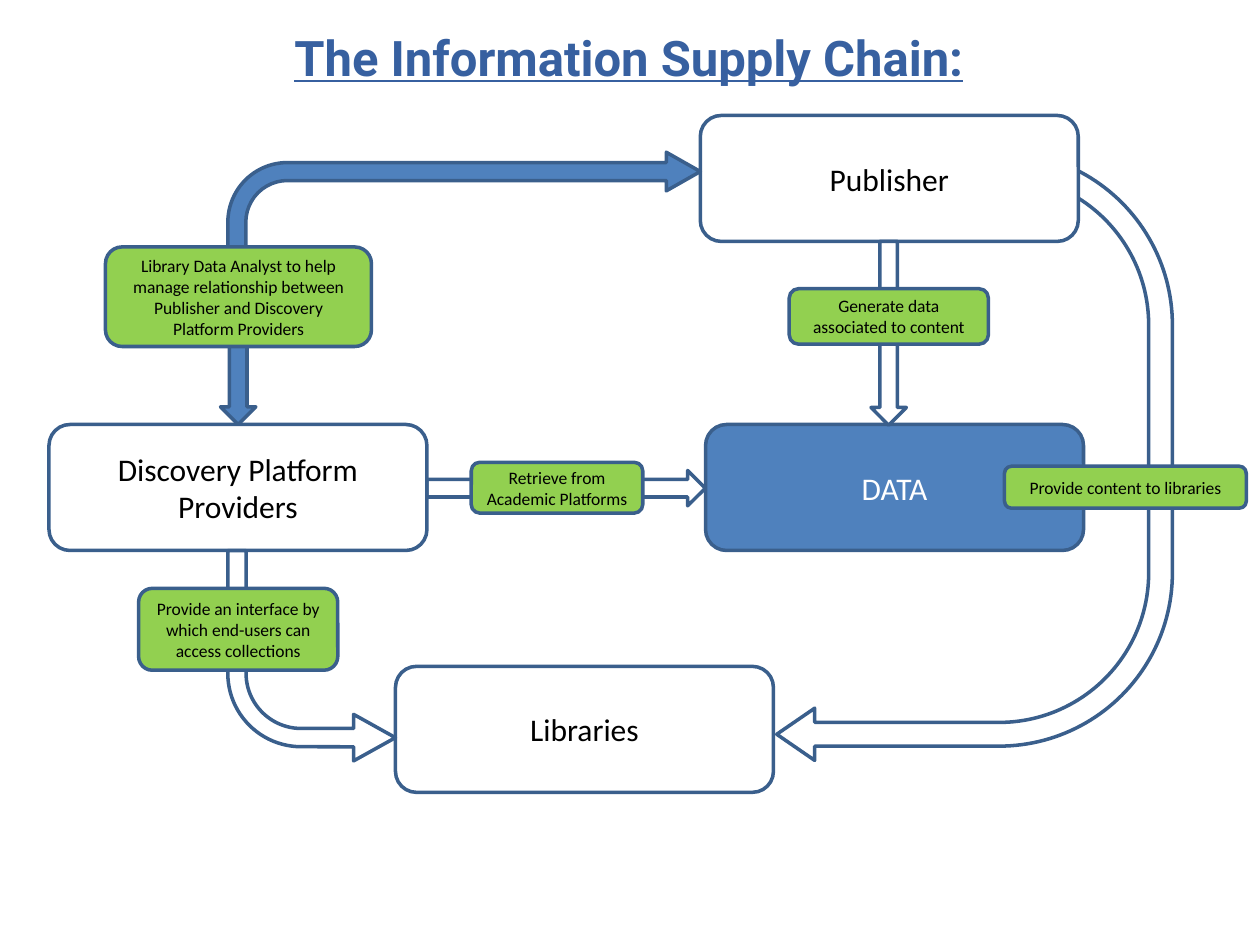
from pptx import Presentation
from pptx.dml.color import RGBColor
from pptx.enum.shapes import MSO_SHAPE
from pptx.enum.text import MSO_ANCHOR, PP_ALIGN
from pptx.util import Pt

COLORS = {
    "white": "FFFFFF",
    "black": "000000",
    "blue": "4F81BD",
    "outline": "3A5F8C",
    "green": "92D050",
    "title": "3760A0",
}
BOX_SIZE = (216, 72)
ARROW_WIDTH = 20.2


class SupplyChainSlide:
    def __init__(self, slide):
        self.slide = slide

    def color(self, name):
        return RGBColor.from_string(COLORS[name])

    def set_text(self, shape, text, size, color, font="Calibri"):
        frame = shape.text_frame
        frame.word_wrap = True
        frame.text = text
        paragraph = frame.paragraphs[0]
        paragraph.alignment = PP_ALIGN.CENTER
        run_font = paragraph.runs[0].font
        run_font.name = font
        run_font.size = Pt(size)
        run_font.color.rgb = self.color(color)
        return paragraph

    def shape(self, kind, left, top, width, height, fill):
        shape = self.slide.shapes.add_shape(kind, Pt(left), Pt(top), Pt(width), Pt(height))
        shape.shadow.inherit = False
        shape.fill.solid()
        shape.fill.fore_color.rgb = self.color(fill)
        shape.line.color.rgb = self.color("outline")
        shape.line.width = Pt(2)
        return shape

    def arrow(self, kind, left, top, width, height, fill="white", rotation=0,
              adjustments=(), mirrored=False):
        shape = self.shape(kind, left, top, width, height, fill)
        for index, value in enumerate(adjustments):
            shape.adjustments[index] = value
        shape.rotation = rotation
        if mirrored:
            shape.element.spPr.xfrm.set("flipH", "1")

    def box(self, text, left, top, fill="white", color="black"):
        shape = self.shape(MSO_SHAPE.ROUNDED_RECTANGLE, left, top, *BOX_SIZE, fill)
        shape.text_frame.vertical_anchor = MSO_ANCHOR.MIDDLE
        self.set_text(shape, text, 18, color)

    def label(self, text, left, top, width, height):
        shape = self.shape(MSO_SHAPE.ROUNDED_RECTANGLE, left, top, width, height, "green")
        shape.text_frame.vertical_anchor = MSO_ANCHOR.MIDDLE
        self.set_text(shape, text, 10, "black")

    def title(self, text, left, top, width, height):
        shape = self.slide.shapes.add_textbox(Pt(left), Pt(top), Pt(width), Pt(height))
        paragraph = self.set_text(shape, text, 28, "title", "Roboto")
        paragraph.line_spacing = 0.9
        paragraph.runs[0].font.bold = True
        paragraph.runs[0].font.underline = True


def main():
    presentation = Presentation()
    presentation.slide_width = Pt(720)
    presentation.slide_height = Pt(540)
    page = SupplyChainSlide(presentation.slides.add_slide(presentation.slide_layouts[6]))

    page.arrow(MSO_SHAPE.U_TURN_ARROW, 383, 147.6, 347.8, 226.1, rotation=90,
               adjustments=(0.06, 0.066, 0.096, 0.438, 1))
    page.box("DATA", 403.2, 242.6, "blue", "white")
    page.box("Publisher", 400.2, 66)
    page.arrow(MSO_SHAPE.DOWN_ARROW, 497.7, 138, ARROW_WIDTH, 105)
    page.arrow(MSO_SHAPE.DOWN_ARROW, 313.4, 199.4, ARROW_WIDTH, 159.1, rotation=270)
    page.box("Discovery Platform Providers", 28, 242.6)
    page.label("Retrieve from Academic Platforms", 269.3, 264.2, 98, 29)
    page.box("Libraries", 226, 380.8)
    page.arrow(MSO_SHAPE.BENT_ARROW, 130.2, 314.6, 95.8, 120.2, rotation=180,
               adjustments=(0.109, 0.139, 0.25, 0.438), mirrored=True)
    page.label("Provide an interface by which end-users can access collections",
               79.2, 336.2, 113.8, 46.8)
    page.label("Provide content to libraries", 574, 266.4, 138.2, 24)
    page.label("Generate data associated to content", 451, 165, 113.8, 31.7)
    page.arrow(MSO_SHAPE.BENT_ARROW, 130.2, 87, 270, 77.8, "blue",
               adjustments=(0.132, 0.142, 0.25, 0.438))
    page.arrow(MSO_SHAPE.DOWN_ARROW, 126, 144, ARROW_WIDTH, 98.6, "blue")
    page.label("Library Data Analyst to help manage relationship between "
               "Publisher and Discovery Platform Providers", 60.3, 141.1, 152, 56.9)
    page.title("The Information Supply Chain:", 41, 15.8, 636.5, 90)

    presentation.save("out.pptx")


if __name__ == "__main__":
    main()
